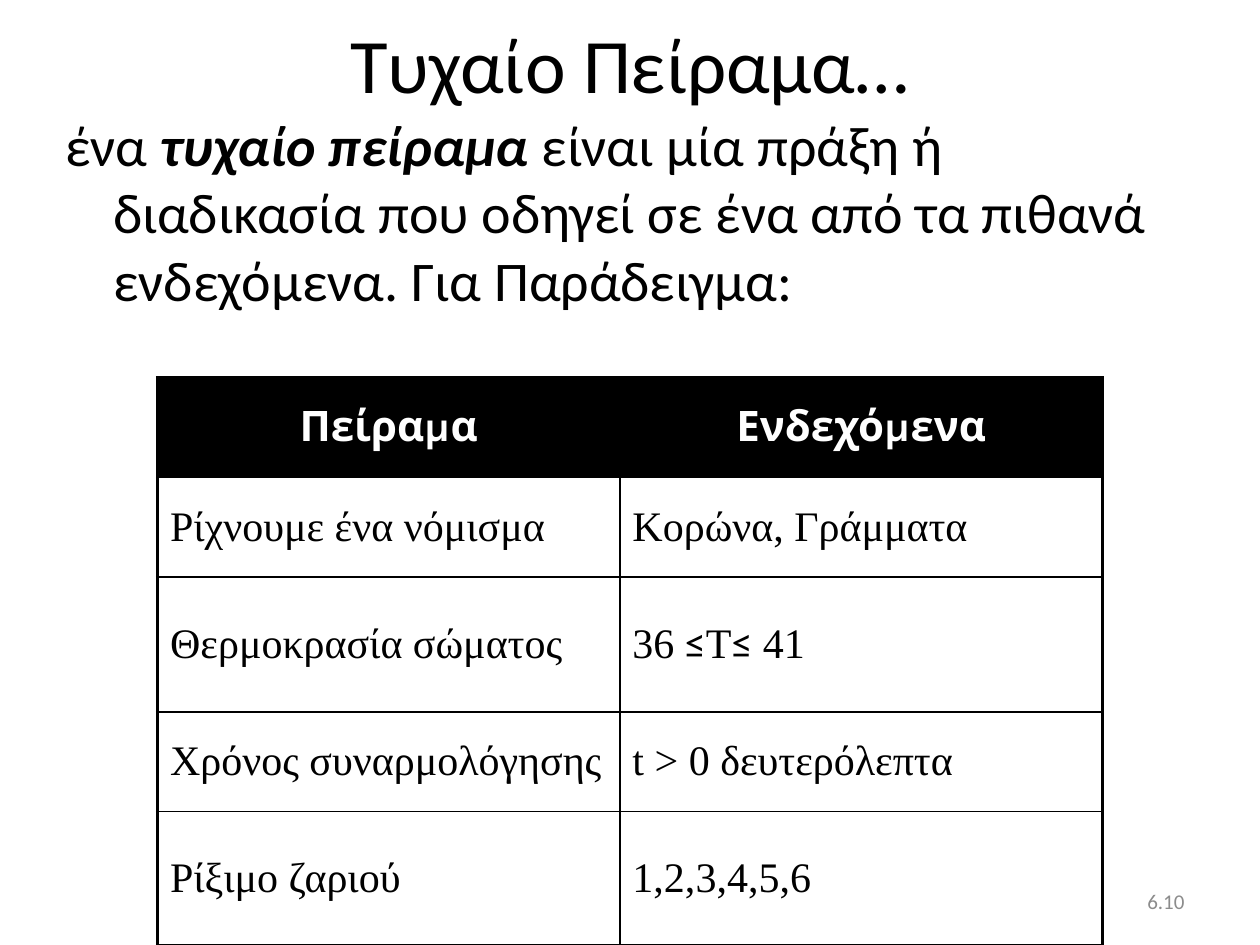
import pptx
import pptx.dml.color
import pptx.enum.text
import pptx.oxml.ns
import pptx.util
from lxml import etree

Inches = pptx.util.Inches
Pt = pptx.util.Pt
RGBColor = pptx.dml.color.RGBColor
ALIGN = pptx.enum.text.PP_ALIGN
ANCHOR = pptx.enum.text.MSO_ANCHOR

BLACK = RGBColor(0, 0, 0)
WHITE = RGBColor(255, 255, 255)
GRAY = RGBColor(0x8C, 0x8C, 0x8C)
SANS = "Calibri"
SERIF = "Times New Roman"
HEADING = "Karla"

TITLE = "Τυχαίο Πείραμα…"
DEFINITION = [
    ("ένα ", False),
    ("τυχαίο πείραμα ", True),
    ("είναι μία πράξη ή διαδικασία που οδηγεί σε ένα από τα πιθανά "
     "ενδεχόμενα. Για Παράδειγμα:", False),
]
PAGE_NUMBER = "6.10"
EXPERIMENTS = [
    ("Πείραμα", "Ενδεχόμενα"),
    ("Ρίχνουμε ένα νόμισμα", "Κορώνα, Γράμματα"),
    ("Θερμοκρασία σώματος", "36 ≤Τ≤ 41"),
    ("Χρόνος συναρμολόγησης", "t > 0 δευτερόλεπτα"),
    ("Ρίξιμο ζαριού", "1,2,3,4,5,6"),
]
COLUMN_WIDTHS = [3.67, 3.83]
ROW_HEIGHTS = [0.79, 0.79, 1.07, 0.79, 1.07]
OUTER_BORDER = 2.25
INNER_BORDER = 1


def add_text(slide, box, parts, size, color, align, anchor):
    shape = slide.shapes.add_textbox(*(Inches(value) for value in box))
    frame = shape.text_frame
    frame.word_wrap = True
    frame.vertical_anchor = anchor
    paragraph = frame.paragraphs[0]
    paragraph.alignment = align
    for text, emphasis in parts:
        add_run(paragraph, text, SANS, size, color, emphasis, emphasis)
    return paragraph


def add_run(paragraph, text, name, size, color, bold=False, italic=False):
    run = paragraph.add_run()
    run.text = text
    run.font.name = name
    run.font.size = Pt(size)
    run.font.bold = bold
    run.font.italic = italic
    run.font.color.rgb = color


def add_border(cell, side, width):
    properties = cell._tc.get_or_add_tcPr()
    line = etree.SubElement(properties, pptx.oxml.ns.qn("a:ln" + side), w=str(Pt(width)))
    fill = etree.SubElement(line, pptx.oxml.ns.qn("a:solidFill"))
    etree.SubElement(fill, pptx.oxml.ns.qn("a:srgbClr"), val=str(BLACK))


def split_symbols(text, symbol="≤"):
    pieces = text.replace(symbol, f"\n{symbol}\n").split("\n")
    return [(piece, SANS if piece == symbol else SERIF) for piece in pieces if piece]


def fill_cell(cell, text, row, column):
    last_row, last_column = len(ROW_HEIGHTS) - 1, len(COLUMN_WIDTHS) - 1
    outer_sides = {"L": column == 0, "R": column == last_column,
                   "T": row == 0, "B": row == last_row}
    for side, is_outer in outer_sides.items():
        add_border(cell, side, OUTER_BORDER if is_outer else INNER_BORDER)
    header = row == 0
    cell.vertical_anchor = ANCHOR.MIDDLE
    cell.fill.solid()
    cell.fill.fore_color.rgb = BLACK if header else WHITE
    paragraph = cell.text_frame.paragraphs[0]
    paragraph.alignment = ALIGN.CENTER if header else ALIGN.LEFT
    pieces = [(text, HEADING)] if header else split_symbols(text)
    for piece, name in pieces:
        add_run(paragraph, piece, name, 24, WHITE if header else BLACK, header)


def add_experiments(slide):
    frame = slide.shapes.add_table(
        len(ROW_HEIGHTS), len(COLUMN_WIDTHS), Inches(1.25), Inches(3),
        Inches(sum(COLUMN_WIDTHS)), Inches(sum(ROW_HEIGHTS)))
    table = frame.table
    table.horz_banding = False
    for column, width in zip(table.columns, COLUMN_WIDTHS):
        column.width = Inches(width)
    for row, height in zip(table.rows, ROW_HEIGHTS):
        row.height = Inches(height)
    for row, texts in enumerate(EXPERIMENTS):
        for column, text in enumerate(texts):
            fill_cell(table.cell(row, column), text, row, column)


def main():
    presentation = pptx.Presentation()
    presentation.slide_width = Inches(10)
    presentation.slide_height = Inches(7.5)
    slide = presentation.slides.add_slide(presentation.slide_layouts[6])
    add_text(slide, (7.17, 6.95, 2.33, 0.4), [(PAGE_NUMBER, False)],
             12, GRAY, ALIGN.RIGHT, ANCHOR.MIDDLE)
    add_text(slide, (0.5, 0, 9, 1), [(TITLE, False)],
             44, BLACK, ALIGN.CENTER, ANCHOR.MIDDLE)
    definition = add_text(slide, (0.42, 0.83, 9.08, 5.87), DEFINITION,
                          32, BLACK, ALIGN.LEFT, ANCHOR.TOP)
    indent = definition._p.get_or_add_pPr()
    indent.set("marL", str(Inches(0.38)))
    indent.set("indent", str(Inches(-0.38)))
    add_experiments(slide)
    presentation.save("out.pptx")


if __name__ == "__main__":
    main()
